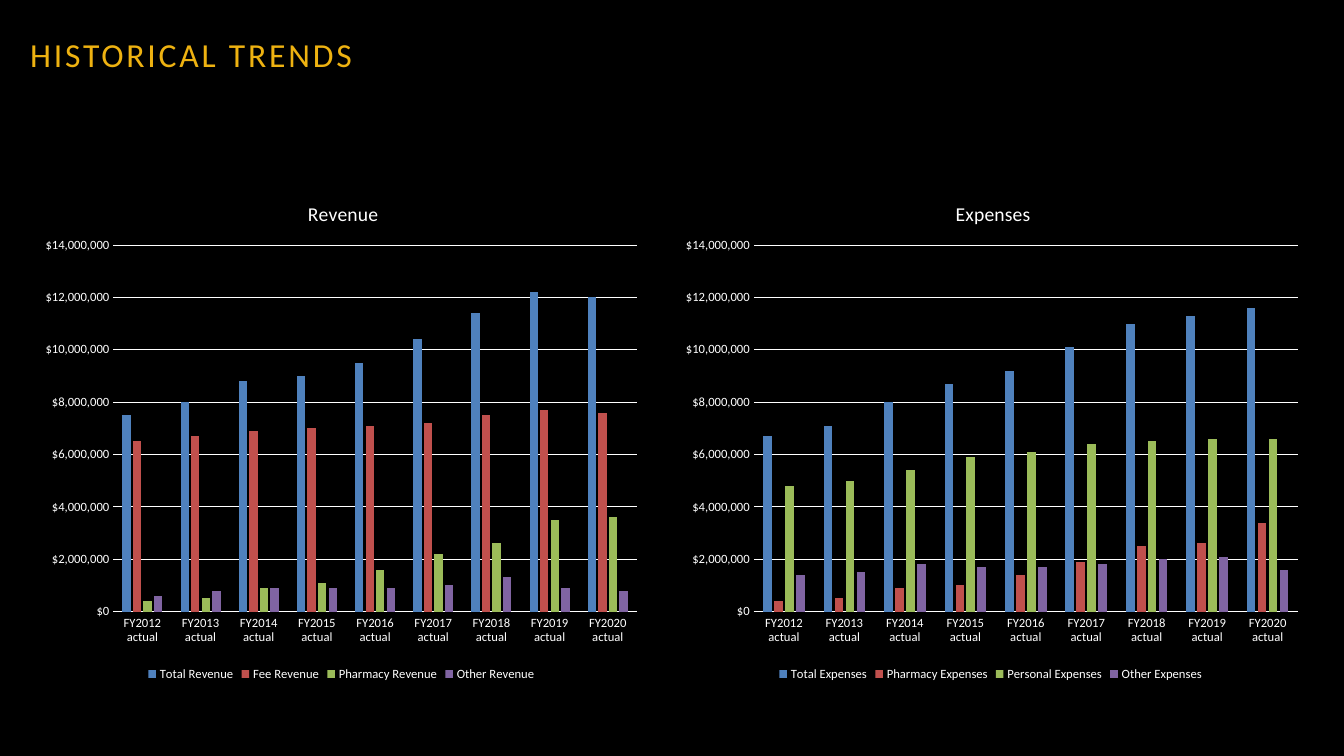
from lxml import etree
from pptx import Presentation
from pptx.chart.data import CategoryChartData
from pptx.dml.color import RGBColor
from pptx.enum.chart import XL_CHART_TYPE, XL_LEGEND_POSITION, XL_TICK_MARK
from pptx.enum.shapes import MSO_SHAPE
from pptx.enum.text import MSO_ANCHOR, PP_ALIGN
from pptx.oxml.ns import qn
from pptx.util import Inches, Pt

COLUMN = XL_CHART_TYPE.COLUMN_CLUSTERED
BOTTOM = XL_LEGEND_POSITION.BOTTOM
NO_TICK = XL_TICK_MARK.NONE
RECT = MSO_SHAPE.RECTANGLE
MIDDLE = MSO_ANCHOR.MIDDLE
LEFT = PP_ALIGN.LEFT

FACE = "Calibri"
COLORS = {
    "black": "000000", "white": "FFFFFF", "gold": "EEB211",
    "blue": "4F81BD", "red": "C0504D", "green": "9BBB59", "purple": "8064A2",
}
HUES = ["blue", "red", "green", "purple"]
MILLION = 1_000_000
YEARS = [f"FY{year} actual" for year in range(2012, 2021)]
CHARTS = [
    ("Revenue", 0.33, 6.11, {
        "Total": [7.5, 8, 8.8, 9, 9.5, 10.4, 11.4, 12.2, 12],
        "Fee": [6.5, 6.7, 6.9, 7, 7.1, 7.2, 7.5, 7.7, 7.6],
        "Pharmacy": [0.4, 0.5, 0.9, 1.1, 1.6, 2.2, 2.6, 3.5, 3.6],
        "Other": [0.6, 0.8, 0.9, 0.9, 0.9, 1, 1.3, 0.9, 0.8],
    }),
    ("Expenses", 6.65, 6.35, {
        "Total": [6.7, 7.1, 8, 8.7, 9.2, 10.1, 11, 11.3, 11.6],
        "Pharmacy": [0.4, 0.5, 0.9, 1, 1.4, 1.9, 2.5, 2.6, 3.4],
        "Personal": [4.8, 5, 5.4, 5.9, 6.1, 6.4, 6.5, 6.6, 6.6],
        "Other": [1.4, 1.5, 1.8, 1.7, 1.7, 1.8, 2, 2.1, 1.6],
    }),
]


def style(font, size, color="white"):
    font.name = FACE
    font.size = Pt(size)
    font.bold = False
    font.color.rgb = RGBColor.from_string(COLORS[color])


def place(node, index, **parts):
    layout = node.find(qn("c:layout"))
    if layout is None:
        layout = etree.Element(qn("c:layout"))
        node.insert(index, layout)
    manual = etree.SubElement(layout, qn("c:manualLayout"))
    for tag, value in parts.items():
        etree.SubElement(manual, qn("c:" + tag)).set("val", str(value))


deck = Presentation()
deck.slide_width = Inches(13.33)
deck.slide_height = Inches(7.5)
slide = deck.slides.add_slide(deck.slide_layouts[6])
slide.background.fill.solid()
slide.background.fill.fore_color.rgb = RGBColor.from_string(COLORS["black"])

banner = slide.shapes.add_shape(RECT, 0, 0, Inches(8.41), Inches(1.08))
banner.shadow.inherit = False
banner.fill.solid()
banner.fill.fore_color.rgb = RGBColor.from_string(COLORS["black"])
banner.line.fill.background()
frame = banner.text_frame
frame.word_wrap = True
frame.vertical_anchor = MIDDLE
frame.margin_left = Inches(0.3)
head = frame.paragraphs[0]
head.alignment = LEFT
run = head.add_run()
run.text = "HISTORICAL TRENDS"
run._r.get_or_add_rPr().set("spc", "200")
style(head.font, 24, "gold")

for topic, left, width, rows in CHARTS:
    data = CategoryChartData(number_format='"$"#,##0')
    data.categories = YEARS
    for name, values in rows.items():
        data.add_series(f"{name} {topic}", [round(v * MILLION) for v in values])
    chart = slide.shapes.add_chart(
        COLUMN, Inches(left), Inches(1.75), Inches(width), Inches(5.05), data
    ).chart
    style(chart.font, 10)

    chart.has_title = True
    title = chart.chart_title
    title.text_frame.text = topic
    style(title.text_frame.paragraphs[0].font, 14)
    place(title._element, 1, xMode="edge", yMode="edge", x=0.44, y=0.04)

    chart.has_legend = True
    chart.legend.position = BOTTOM
    chart.legend.include_in_layout = False
    style(chart.legend.font, 9)

    plot = chart.plots[0]
    plot.gap_width = 219
    plot.overlap = -27
    plot.vary_by_categories = False
    place(plot._element.getparent(), 0, layoutTarget="inner", xMode="edge",
          yMode="edge", x=0.13, y=0.135, w=0.85, h=0.72)
    for series, hue in zip(plot.series, HUES):
        series.format.fill.solid()
        series.format.fill.fore_color.rgb = RGBColor.from_string(COLORS[hue])

    years, money = chart.category_axis, chart.value_axis
    for axis in (years, money):
        axis.major_tick_mark = NO_TICK
        axis.minor_tick_mark = NO_TICK
        style(axis.tick_labels.font, 9)
    money.minimum_scale = 0
    money.maximum_scale = 14 * MILLION
    money.major_unit = 2 * MILLION
    money.tick_labels.number_format = '"$"#,##0'
    money.tick_labels.number_format_is_linked = False
    money.format.line.fill.background()
    for line in (years.format.line, money.major_gridlines.format.line):
        line.color.rgb = RGBColor.from_string(COLORS["white"])
        line.width = Pt(0.75)

deck.save("out.pptx")
